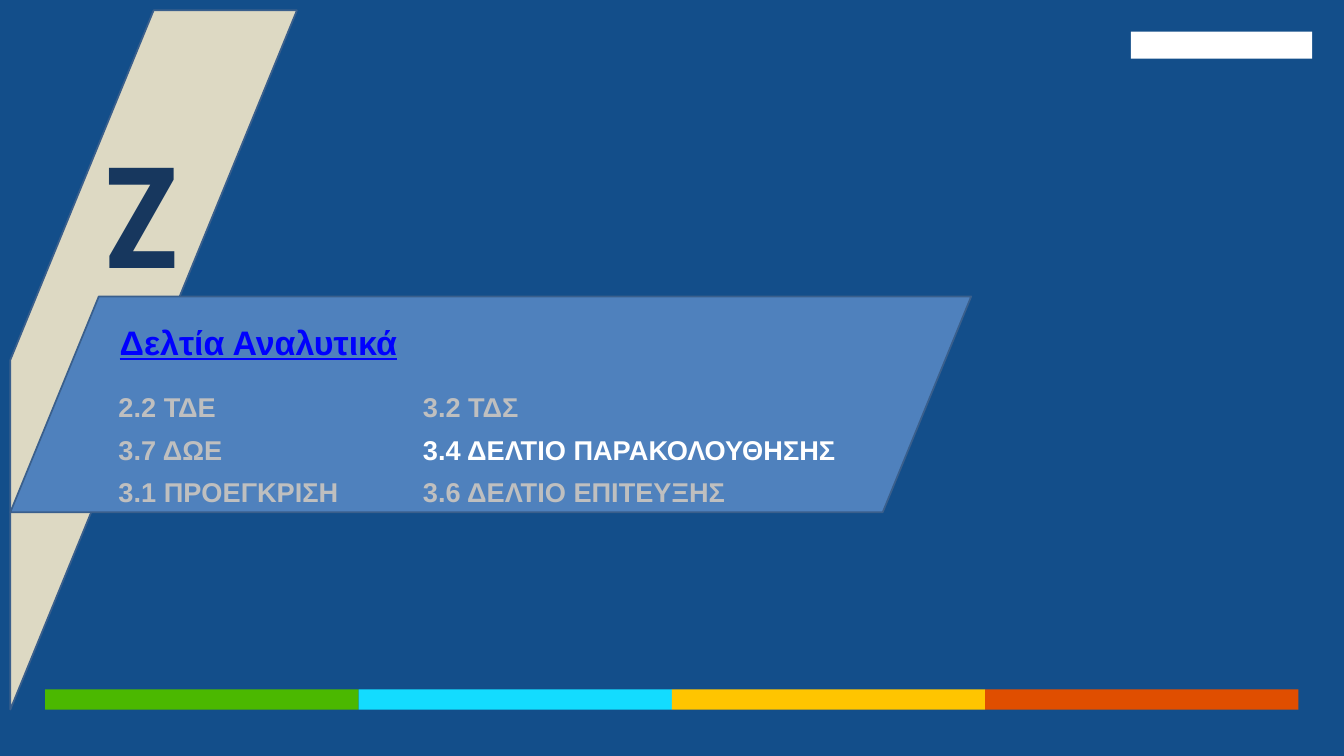
import dataclasses

import pptx
import pptx.dml.color
import pptx.enum.shapes
import pptx.enum.text
import pptx.oxml.ns
import pptx.util
from lxml import etree

Cm = pptx.util.Cm
Kind = pptx.enum.shapes.MSO_SHAPE
Align = pptx.enum.text.PP_ALIGN


@dataclasses.dataclass(frozen=True)
class Box:
    left: float
    top: float
    width: float
    height: float


@dataclasses.dataclass(frozen=True)
class Block:
    box: Box
    fill: str
    kind: Kind = Kind.RECTANGLE
    line: str = ""
    slant: float | None = None


@dataclasses.dataclass(frozen=True)
class Line:
    text: str
    size: float
    color: str
    font: str = "Arial"
    under: bool = False
    align: Align = Align.LEFT
    space: float = 1.3


def paint(target, color: str) -> None:
    if hasattr(target, "solid"):
        target.solid()
        target = target.fore_color
    target.rgb = pptx.dml.color.RGBColor.from_string(color)


def draw(slide, block: Block) -> None:
    box = block.box
    shape = slide.shapes.add_shape(
        block.kind, Cm(box.left), Cm(box.top), Cm(box.width), Cm(box.height))
    shape.shadow.inherit = False
    paint(shape.fill, block.fill)
    if block.slant is not None:
        shape.adjustments[0] = block.slant
    if block.line:
        paint(shape.line.color, block.line)
        shape.line.width = pptx.util.Pt(2)
    else:
        shape.line.fill.background()


def write(shape, box: Box, lines: list[Line]) -> None:
    shape.left, shape.top = Cm(box.left), Cm(box.top)
    shape.width, shape.height = Cm(box.width), Cm(box.height)
    frame = shape.text_frame
    frame.word_wrap = True
    frame.auto_size = pptx.enum.text.MSO_AUTO_SIZE.NONE
    frame.vertical_anchor = pptx.enum.text.MSO_ANCHOR.TOP
    frame.text = "\n".join(line.text for line in lines)
    for para, line in zip(frame.paragraphs, lines):
        props = para._p.get_or_add_pPr()
        props.set("marL", "0")
        props.set("indent", "0")
        etree.SubElement(props, pptx.oxml.ns.qn("a:buNone"))
        para.alignment = line.align
        para.line_spacing = line.space
        para.space_before = pptx.util.Pt(0)
        para.font.name = line.font
        para.font.size = pptx.util.Pt(line.size)
        para.font.bold = True
        para.font.underline = line.under
        paint(para.font.color, line.color)


EDGE = "3A5F8C"
DIM = "BFBFBF"
BAND = 13.02
BANDS = ["4BB800", "13DCFF", "FFC500", "E04E00"]

BLOCKS = [
    Block(Box(46.99, 1.32, 7.54, 1.12), "FFFFFF"),
    Block(Box(0.43, 0.43, 11.91, 29.06), "DDD9C3", Kind.DIAGONAL_STRIPE, EDGE),
    *[Block(Box(1.88 + i * BAND, 28.65, BAND, 0.84), color)
      for i, color in enumerate(BANDS)],
    Block(Box(0.43, 12.32, 39.93, 8.97), "4F81BD", Kind.PARALLELOGRAM, EDGE, 0.41),
]

LETTER = Line("Ζ", 166, "17375E", "Roboto Condensed", align=Align.CENTER, space=1)
TITLE = Line("Δελτία Αναλυτικά", 40, "0000FF", under=True)
LEFT = [Line(text, 32, DIM) for text in ("2.2 ΤΔΕ", "3.7 ΔΩΕ", "3.1 ΠΡΟΕΓΚΡΙΣΗ")]
RIGHT = [
    Line("3.2 ΤΔΣ", 32, DIM),
    Line("3.4 ΔΕΛΤΙΟ ΠΑΡΑΚΟΛΟΥΘΗΣΗΣ", 32, "FFFFFF"),
    Line("3.6 ΔΕΛΤΙΟ ΕΠΙΤΕΥΞΗΣ", 32, DIM),
]


def main() -> None:
    deck = pptx.Presentation()
    deck.slide_width, deck.slide_height = Cm(55.85), Cm(31.42)
    slide = deck.slides.add_slide(deck.slide_layouts[3])
    paint(slide.background.fill, "134E8A")
    title, left, right = slide.placeholders
    for block in BLOCKS:
        draw(slide, block)
    letter = slide.shapes.add_textbox(0, 0, 0, 0)
    write(letter, Box(3.81, 5.18, 4.14, 7.34), [LETTER])
    write(title, Box(4.72, 12.73, 33.25, 2.26), [TITLE])
    write(left, Box(4.67, 15.7, 11.02, 5.44), LEFT)
    write(right, Box(17.32, 15.7, 18.49, 5.44), RIGHT)
    for holder in (title, left, right):
        slide.shapes._spTree.append(holder._element)
    deck.save("out.pptx")


if __name__ == "__main__":
    main()
